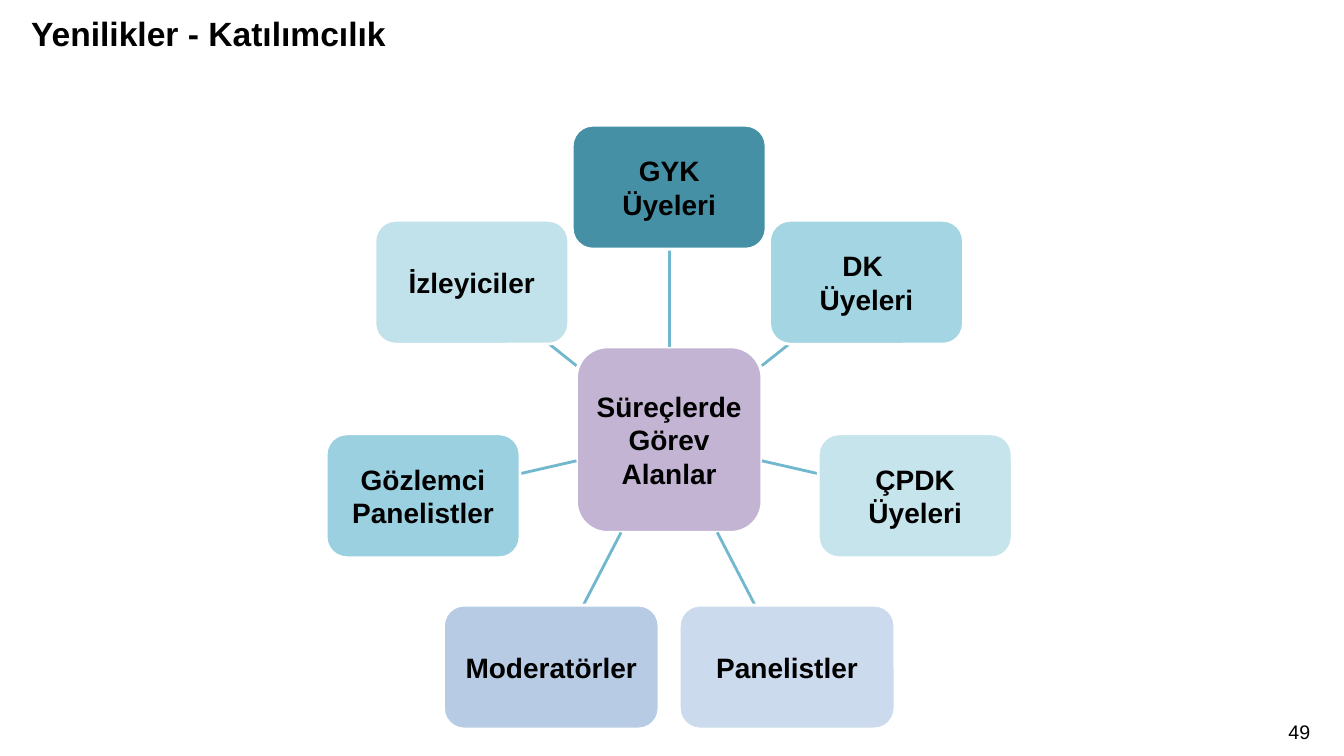
from dataclasses import dataclass
from math import cos, pi, sin

from pptx import Presentation
from pptx.dml.color import RGBColor
from pptx.enum.shapes import MSO_CONNECTOR as Connector, MSO_SHAPE as Shape
from pptx.enum.text import MSO_ANCHOR as Anchor, PP_ALIGN as Align
from pptx.oxml.ns import qn
from pptx.util import Pt


@dataclass(frozen=True)
class Theme:
    font: str = "Arial"
    text: str = "000000"
    outline: str = "FFFFFF"
    spoke: str = "71B7CD"
    hub: str = "B3A2C7"
    title_size: int = 24
    label_size: int = 20
    number_size: int = 14
    line_width: int = 2


THEME = Theme()

HUB_LABEL = ["Süreçlerde Görev Alanlar"]
HUB_SIZE = 132.5
ROLE_HEIGHT = 88.5
NARROW, WIDE = 138.5, 154

# Clockwise from the top: label lines, colour, opacity %, width, sideways shift
ROLES = [
    (["GYK", "Üyeleri"], "31859C", 90, NARROW, 0),
    (["DK ", "Üyeleri"], "93CDDD", 84, NARROW, 0),
    (["ÇPDK", "Üyeleri"], "B7DEE8", 79, NARROW, 0),
    (["Panelistler"], "B9CDE5", 73, WIDE, 6),
    (["Moderatörler"], "95B3D7", 67, WIDE, -6),
    (["Gözlemci Panelistler"], "4BACC6", 56, NARROW, 0),
    (["İzleyiciler"], "93CDDD", 56, NARROW, 0),
]


def rgb(value):
    return RGBColor.from_string(value)


def write(frame, lines, size, align, bold=True):
    frame.word_wrap = True
    for index, line in enumerate(lines):
        paragraph = frame.paragraphs[0] if index == 0 else frame.add_paragraph()
        paragraph.alignment = align
        run = paragraph.add_run()
        run.text = line
        run.font.name = THEME.font
        run.font.size = Pt(size)
        run.font.bold = bold
        run.font.color.rgb = rgb(THEME.text)


def add_card(slide, center, width, height, lines, color, opacity):
    x, y = center
    card = slide.shapes.add_shape(Shape.ROUNDED_RECTANGLE, Pt(x - width / 2),
                                  Pt(y - height / 2), Pt(width), Pt(height))
    card.shadow.inherit = False
    card.fill.solid()
    card.fill.fore_color.rgb = rgb(color)
    fill_color = card._element.spPr.find(qn("a:solidFill")).find(qn("a:srgbClr"))
    alpha = fill_color.makeelement(qn("a:alpha"), {"val": str(opacity * 1000)})
    fill_color.append(alpha)
    card.line.color.rgb = rgb(THEME.outline)
    card.line.width = Pt(THEME.line_width)
    frame = card.text_frame
    frame.margin_left = frame.margin_right = Pt(4.5)
    frame.margin_top = frame.margin_bottom = Pt(4.5)
    frame.vertical_anchor = Anchor.MIDDLE
    write(frame, lines, THEME.label_size, Align.CENTER)


def edge_share(dx, dy, width, height):
    """Share of the ray (dx, dy) that lies inside a box centred at its start."""
    return min(size / 2 / abs(reach)
               for size, reach in ((width, dx), (height, dy)) if abs(reach) > 0.01)


def add_spoke(slide, hub, role, role_width):
    dx, dy = role[0] - hub[0], role[1] - hub[1]
    start = edge_share(dx, dy, HUB_SIZE, HUB_SIZE)
    end = 1 - edge_share(dx, dy, role_width, ROLE_HEIGHT)
    points = [Pt(origin + share * reach) for share in (start, end)
              for origin, reach in zip(hub, (dx, dy))]
    spoke = slide.shapes.add_connector(Connector.STRAIGHT, *points)
    spoke.line.color.rgb = rgb(THEME.spoke)
    spoke.line.width = Pt(THEME.line_width)
    properties = spoke._element.spPr
    properties.append(properties.makeelement(qn("a:effectLst"), {}))


def add_wheel(slide, left, top, width, radius):
    # Hub, with the first role touching the top of the box
    hub = (left + width / 2, top + ROLE_HEIGHT / 2 + radius)
    add_card(slide, hub, HUB_SIZE, HUB_SIZE, HUB_LABEL, THEME.hub, 80)

    # Roles at equal angles, each with its spoke
    for index, (lines, color, opacity, role_width, shift) in enumerate(ROLES):
        angle = 2 * pi * index / len(ROLES)
        role = (hub[0] + radius * sin(angle) + shift, hub[1] - radius * cos(angle))
        add_spoke(slide, hub, role, role_width)
        add_card(slide, role, role_width, ROLE_HEIGHT, lines, color, opacity)


def add_title(slide, left, top, width, height):
    title = slide.shapes.title
    title.left, title.top, title.width, title.height = map(Pt, (left, top, width, height))
    title.text_frame.vertical_anchor = Anchor.MIDDLE
    write(title.text_frame, ["Yenilikler - Katılımcılık"], THEME.title_size, Align.LEFT)


def add_page_number(slide, left, top, width, height):
    number = slide.shapes.add_textbox(*map(Pt, (left, top, width, height)))
    write(number.text_frame, ["49"], THEME.number_size, Align.RIGHT, bold=False)


def main():
    deck = Presentation()
    deck.slide_width, deck.slide_height = Pt(960), Pt(540)
    slide = deck.slides.add_slide(deck.slide_layouts[5])
    add_title(slide, 15, 0, 819, 47.5)
    add_wheel(slide, 232.5, 89.5, 491, 180.3)
    add_page_number(slide, 746, 511, 197, 29)
    deck.save("out.pptx")


if __name__ == "__main__":
    main()
